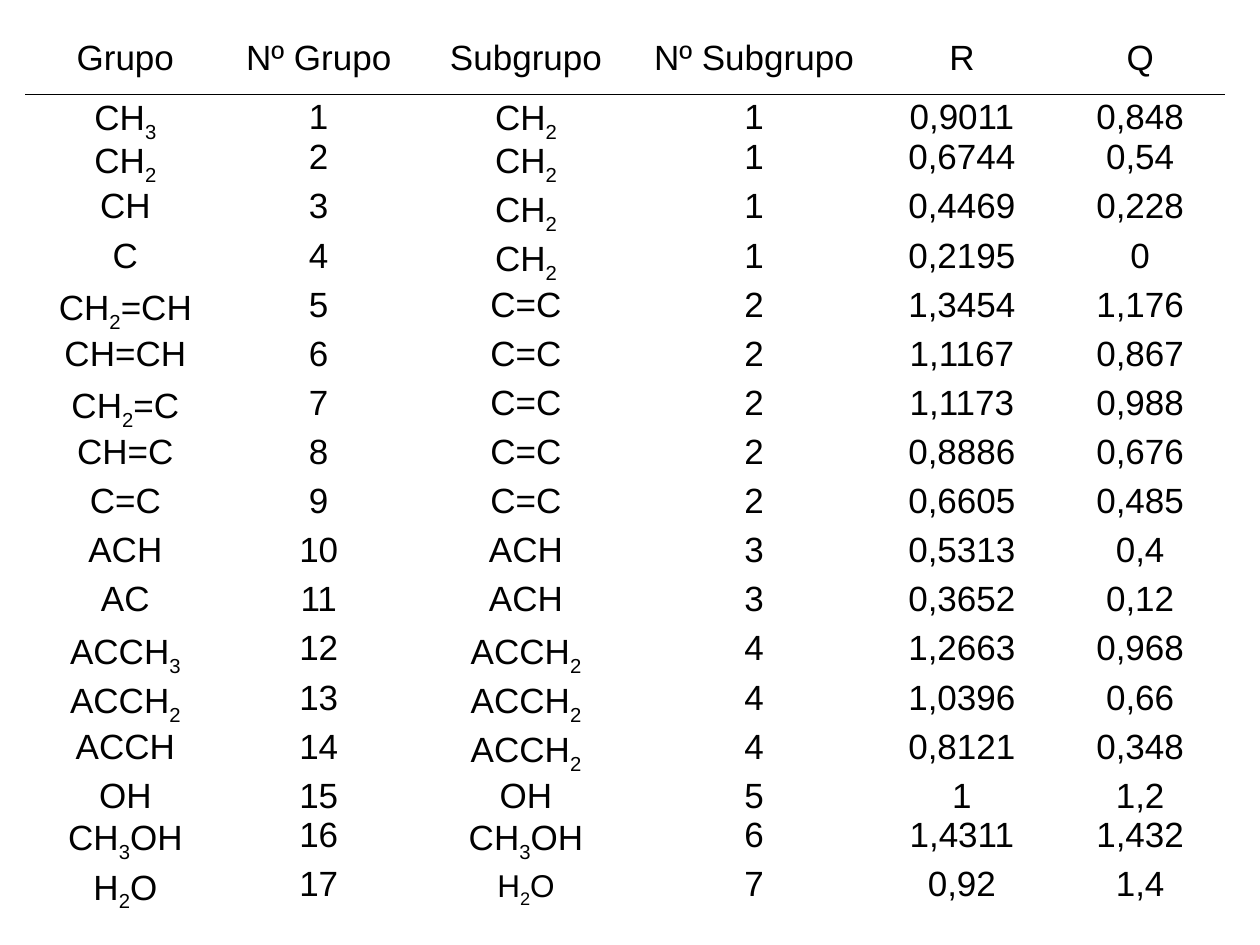
from itertools import groupby

from lxml import etree
from pptx import Presentation
from pptx.dml.color import RGBColor
from pptx.enum.text import MSO_ANCHOR as ANCHOR, PP_ALIGN as ALIGN
from pptx.oxml.ns import qn
from pptx.util import Inches, Pt

BLACK = "000000"
NO_STYLE = "{2D5ABB26-0587-4C30-8999-92F81FD0307C}"
FORMULA_COLS = (0, 2)

HEADER = ["Grupo", "Nº Grupo", "Subgrupo", "Nº Subgrupo", "R", "Q"]
# group, subgroup, subgroup number, R, Q
GROUPS = [
    ("CH3", "CH2", "1", "0,9011", "0,848"),
    ("CH2", "CH2", "1", "0,6744", "0,54"),
    ("CH", "CH2", "1", "0,4469", "0,228"),
    ("C", "CH2", "1", "0,2195", "0"),
    ("CH2=CH", "C=C", "2", "1,3454", "1,176"),
    ("CH=CH", "C=C", "2", "1,1167", "0,867"),
    ("CH2=C", "C=C", "2", "1,1173", "0,988"),
    ("CH=C", "C=C", "2", "0,8886", "0,676"),
    ("C=C", "C=C", "2", "0,6605", "0,485"),
    ("ACH", "ACH", "3", "0,5313", "0,4"),
    ("AC", "ACH", "3", "0,3652", "0,12"),
    ("ACCH3", "ACCH2", "4", "1,2663", "0,968"),
    ("ACCH2", "ACCH2", "4", "1,0396", "0,66"),
    ("ACCH", "ACCH2", "4", "0,8121", "0,348"),
    ("OH", "OH", "5", "1", "1,2"),
    ("CH3OH", "CH3OH", "6", "1,4311", "1,432"),
    ("H2O", "H2O", "7", "0,92", "1,4"),
]
rows = [HEADER] + [[group, str(n), *rest]
                   for n, (group, *rest) in enumerate(GROUPS, 1)]
last = len(rows) - 1
COL_WIDTHS = [1.59, 1.48, 1.81, 1.81, 1.49, 1.34]
ROW_HEIGHT = 0.39
ODD_HEIGHTS = {1: 0.4, 15: 0.31, 17: 0.37}
# Row index to the side that carries the rule below the header
RULE_SIDES = {0: "lnB", 1: "lnT"}


def rgb(value):
    return RGBColor.from_string(value)


def set_borders(cell, ruled_side, color):
    """Draw a 1 pt line on ruled_side and switch the other sides off."""
    tcPr = cell._tc.get_or_add_tcPr()
    for side in ("lnL", "lnR", "lnT", "lnB"):
        ln = etree.SubElement(tcPr, qn(f"a:{side}"), w=str(Pt(1)))
        if side == ruled_side:
            fill = etree.SubElement(ln, qn("a:solidFill"))
            etree.SubElement(fill, qn("a:srgbClr"), val=color)
        else:
            etree.SubElement(ln, qn("a:noFill"))


prs = Presentation()
prs.slide_width, prs.slide_height = Inches(10), Inches(7.5)
s = prs.slides.add_slide(prs.slide_layouts[6])

frame = s.shapes.add_table(len(rows), len(HEADER), Inches(0.2), Inches(0.36),
                           Inches(9.53), Inches(6.94))
table = frame.table
table.first_row = table.horz_banding = False
table._tbl.tblPr.find(qn("a:tableStyleId")).text = NO_STYLE
for col, width in zip(table.columns, COL_WIDTHS):
    col.width = Inches(width)

for i, row in enumerate(rows):
    table.rows[i].height = Inches(ODD_HEIGHTS.get(i, ROW_HEIGHT))
    for j, text in enumerate(row):
        cell = table.cell(i, j)
        cell.margin_left = cell.margin_right = 0
        cell.margin_top = cell.margin_bottom = 0
        cell.vertical_anchor = ANCHOR.MIDDLE if i == 1 else ANCHOR.TOP
        set_borders(cell, RULE_SIDES.get(i), BLACK)
        cell.fill.background()

        p = cell.text_frame.paragraphs[0]
        p.alignment = ALIGN.CENTER
        p.line_spacing = 0.8
        is_formula = j in FORMULA_COLS
        # Digits inside a formula become subscripts
        for is_digit, chars in groupby(text, str.isdigit if is_formula else bool):
            r = p.add_run()
            r.text = "".join(chars)
            r.font.name = "Arial"
            r.font.size = Pt(18 if (i, j) == (last, 2) else 20)
            r.font.color.rgb = rgb(BLACK)
            if is_formula and is_digit:
                r.font._element.set("baseline", "-25000")

prs.save("out.pptx")
